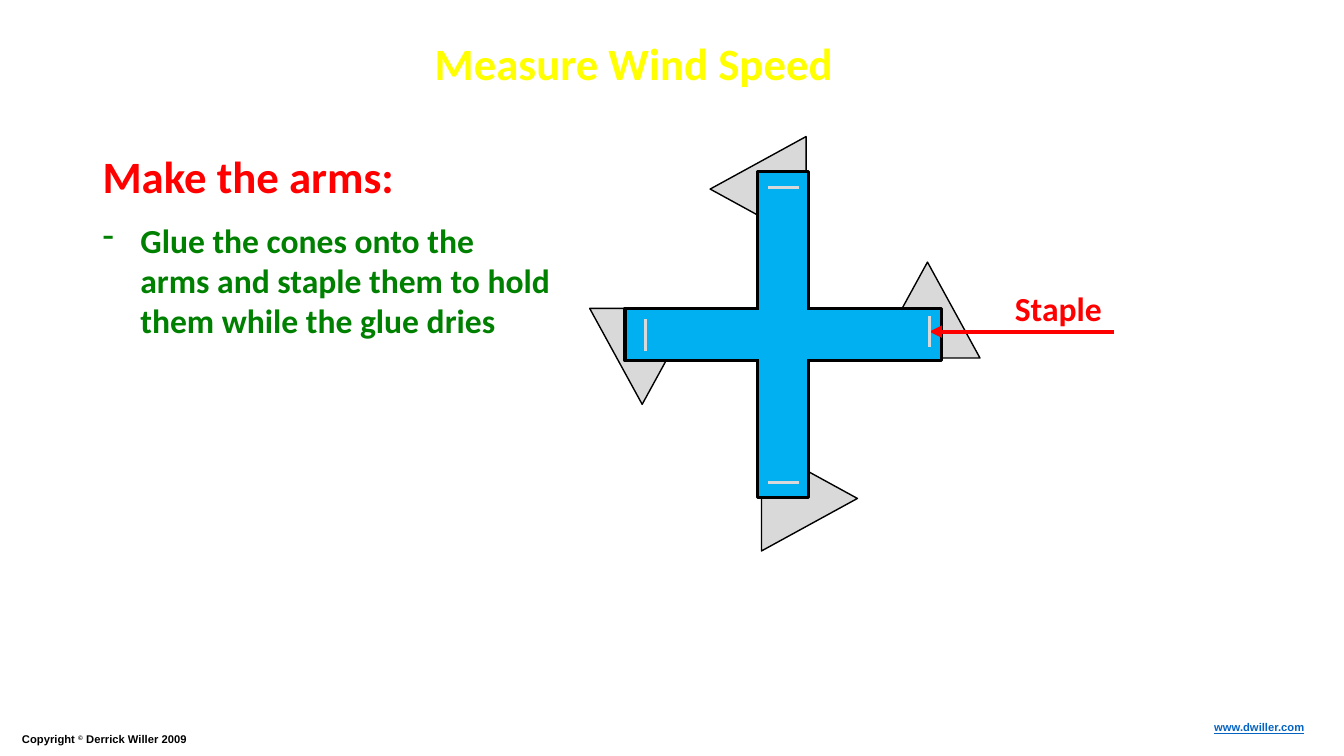
import pptx
import pptx.dml.color
import pptx.enum.shapes
import pptx.enum.text
import pptx.oxml
import pptx.oxml.ns
import pptx.util

Pt = pptx.util.Pt
SHAPE = pptx.enum.shapes.MSO_SHAPE
ALIGN = pptx.enum.text.PP_ALIGN

COLORS = {
    "title": "FFFF00",
    "red": "FF0000",
    "green": "008000",
    "black": "000000",
    "link": "0563C1",
    "arm": "00B0F0",
    "cone": "D9D9D9",
}


def rgb(name):
    return pptx.dml.color.RGBColor.from_string(COLORS[name])


def append_xml(parent, tag, attributes=""):
    parent.append(pptx.oxml.parse_xml(
        f"<a:{tag} {pptx.oxml.ns.nsdecls('a')} {attributes}/>"))


def write(paragraph, text, size=24, color="black", font="Calibri", bold=True,
          underline=None, baseline=None):
    run = paragraph.add_run()
    run.text = text
    run.font.size = Pt(size)
    run.font.name = font
    run.font.bold = bold
    run.font.underline = underline
    run.font.color.rgb = rgb(color)
    if baseline:
        run.font._element.set("baseline", str(baseline))


class WindSlide:
    def __init__(self, presentation):
        self.slide = presentation.slides.add_slide(presentation.slide_layouts[6])
        self.shapes = self.slide.shapes

    def text_box(self, left, top, width, height, wrap=True, align=ALIGN.LEFT):
        """Add an empty text box and return its text frame."""
        box = self.shapes.add_textbox(Pt(left), Pt(top), Pt(width), Pt(height))
        box.text_frame.word_wrap = wrap
        box.text_frame.paragraphs[0].alignment = align
        return box.text_frame

    def shape(self, kind, left, top, width, height, fill, line_width, rotation=0):
        shape = self.shapes.add_shape(kind, Pt(left), Pt(top), Pt(width), Pt(height))
        shape.shadow.inherit = False
        shape.rotation = rotation
        shape.fill.solid()
        shape.fill.fore_color.rgb = rgb(fill)
        shape.line.color.rgb = rgb("black")
        shape.line.width = Pt(line_width)

    def line(self, x1, y1, x2, y2, color, width, arrow=False):
        line = self.shapes.add_connector(
            pptx.enum.shapes.MSO_CONNECTOR.STRAIGHT, Pt(x1), Pt(y1), Pt(x2), Pt(y2))
        line.line.color.rgb = rgb(color)
        line.line.width = Pt(width)
        if arrow:
            append_xml(line.line._get_or_add_ln(), "tailEnd", 'type="triangle"')
        append_xml(line._element.spPr, "effectLst")


def add_wording(page):
    title = page.text_box(298, 22.3, 309.6, 46, wrap=False, align=ALIGN.CENTER)
    write(title.paragraphs[0], "Measure Wind Speed", size=32, color="title")

    rights = page.text_box(8.6, 519.8, 406.8, 17.3).paragraphs[0]
    for text, baseline in (("Copyright ", None), ("©", 30000),
                           (" Derrick Willer 2009", None)):
        write(rights, text, size=8, font="Arial", baseline=baseline)

    website = page.text_box(842.4, 511.2, 96.5, 17.3, align=ALIGN.RIGHT)
    write(website.paragraphs[0], "www.dwiller.com", size=8, color="link",
          font="Arial", underline=True)

    instructions = page.text_box(66.2, 103, 334, 174.2)
    heading = instructions.paragraphs[0]
    write(heading, "Make the arms:", size=32, color="red")
    step = instructions.add_paragraph()
    write(step, "Glue the cones onto the arms and staple them to hold them "
                "while the glue dries", color="green")
    heading.space_before = step.space_before = Pt(12)
    properties = step._p.get_or_add_pPr()
    properties.set("marL", str(Pt(27)))
    properties.set("indent", str(-Pt(27)))
    append_xml(properties, "buChar", 'char="-"')


def add_anemometer(page):
    center_x, center_y = 559.4, 239
    arm_width, arm_height = 36.4, 37.4
    across, down = 226, 233.4

    cones = ((625, 187.2, 0), (540.7, 321.8, 90),
             (421.2, 220.3, 180), (504, 100.8, 270))
    for left, top, rotation in cones:
        page.shape(SHAPE.ISOSCELES_TRIANGLE, left, top, 75, 68.5, "cone", 1, rotation)

    for width, height in ((arm_width, down), (across, arm_height)):
        page.shape(SHAPE.RECTANGLE, center_x - width / 2, center_y - height / 2,
                   width, height, "arm", 2.25)

    # Cover the outlines where the two arms cross.
    for side in (-1, 1):
        x = center_x + side * arm_width / 2
        y = center_y + side * arm_height / 2
        page.line(x, center_y - 17.3, x, center_y + 17.3, "arm", 3)
        page.line(center_x - 17, y, center_x + 17, y, "arm", 3)

    staple_half = 11.2
    page.line(795.6, 236.9, 663.8, 236.9, "red", 3, arrow=True)
    label = page.text_box(717.8, 202.3, 77.8, 36, wrap=False)
    write(label.paragraphs[0], "Staple", color="red")
    for x, y in ((663.8, 236.6), (460.8, 239.4)):
        page.line(x, y - staple_half, x, y + staple_half, "cone", 2.25)
    for y in (133.9, 344.9):
        page.line(559.8 - staple_half, y, 559.8 + staple_half, y, "cone", 2.25)


def main():
    presentation = pptx.Presentation()
    presentation.slide_width = Pt(960)
    presentation.slide_height = Pt(540)
    page = WindSlide(presentation)
    add_wording(page)
    add_anemometer(page)
    presentation.save("out.pptx")


if __name__ == "__main__":
    main()
